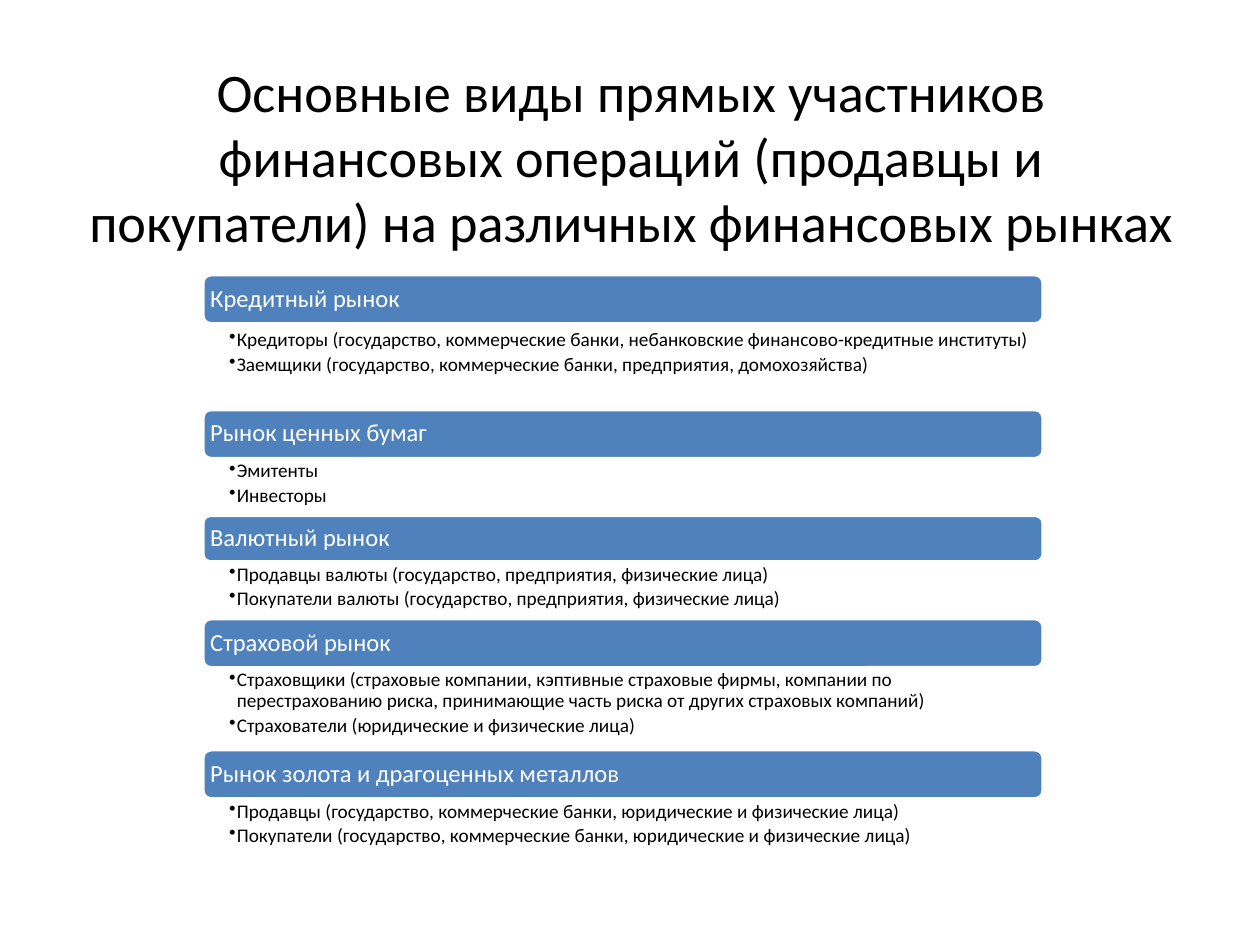
from lxml import etree
from pptx import Presentation
from pptx.dml.color import RGBColor
from pptx.enum.shapes import MSO_SHAPE
from pptx.enum.text import MSO_ANCHOR, MSO_AUTO_SIZE, PP_ALIGN
from pptx.oxml.ns import qn
from pptx.util import Inches, Pt

ROUND = MSO_SHAPE.ROUNDED_RECTANGLE
TOP, MIDDLE = MSO_ANCHOR.TOP, MSO_ANCHOR.MIDDLE
LEFT, CENTER = PP_ALIGN.LEFT, PP_ALIGN.CENTER

TITLE = ("Основные виды прямых участников финансовых операций "
         "(продавцы и покупатели) на различных финансовых рынках")
# market, bar height, gap below the bar, list height, participants
MARKETS = [
    ("Кредитный рынок", 0.39, 0.03, 0.65, [
        "Кредиторы (государство, коммерческие банки, небанковские "
        "финансово-кредитные институты)",
        "Заемщики (государство, коммерческие банки, предприятия, домохозяйства)"]),
    ("Рынок ценных бумаг", 0.39, 0, 0.45, ["Эмитенты", "Инвесторы"]),
    ("Валютный рынок", 0.37, 0, 0.45, [
        "Продавцы валюты (государство, предприятия, физические лица)",
        "Покупатели валюты (государство, предприятия, физические лица)"]),
    ("Страховой рынок", 0.39, 0, 0.65, [
        "Страховщики (страховые компании, кэптивные страховые фирмы, компании по "
        "перестрахованию риска, принимающие часть риска от других страховых компаний)",
        "Страхователи (юридические и физические лица)"]),
    ("Рынок золота и драгоценных металлов", 0.39, 0, 0.45, [
        "Продавцы (государство, коммерческие банки, юридические и физические лица)",
        "Покупатели (государство, коммерческие банки, юридические и физические лица)"]),
]
COLORS = {"bar": "4F81BD", "white": "FFFFFF", "black": "000000"}
X, Y, WIDTH = 1.61, 2.18, 6.67


def color(name):
    return RGBColor.from_string(COLORS[name])


def style(para, size, tint, align=LEFT):
    para.alignment = align
    font = para.font
    font.name, font.size = "Calibri", Pt(size)
    font.color.rgb = color(tint)


def frame(shape, anchor, left, top, right, bottom):
    text = shape.text_frame
    text.word_wrap = True
    text.vertical_anchor = anchor
    text.margin_left, text.margin_top = Inches(left), Inches(top)
    text.margin_right, text.margin_bottom = Inches(right), Inches(bottom)
    return text


def bullet(para):
    props = para._p.get_or_add_pPr()
    props.set("marL", str(Inches(0.06)))
    props.set("indent", str(Inches(-0.06)))
    etree.SubElement(props, qn("a:buChar")).set("char", "•")


def add_bar(slide, name, top, height):
    bar = slide.shapes.add_shape(
        ROUND, Inches(X), Inches(top), Inches(WIDTH), Inches(height))
    bar.shadow.inherit = False
    bar.fill.solid()
    bar.fill.fore_color.rgb = color("bar")
    bar.line.color.rgb = color("white")
    bar.line.width = Pt(2)
    # The rounded corners already push the text in by about 0.02
    text = frame(bar, MIDDLE, 0.04, 0.04, 0.04, 0.04)
    text.text = name
    para = text.paragraphs[0]
    para.line_spacing = 0.9
    style(para, 14, "white")


def add_list(slide, items, top, height):
    box = slide.shapes.add_textbox(
        Inches(X), Inches(top), Inches(WIDTH), Inches(height))
    text = frame(box, TOP, 0.21, 0.02, 0.11, 0.02)
    text.text = "\n".join(items)
    for para in text.paragraphs:
        para.line_spacing = 0.9
        para.space_after = Pt(2.2)
        style(para, 11, "black")
        bullet(para)


def main():
    deck = Presentation()
    deck.slide_width, deck.slide_height = Inches(10), Inches(7.5)
    slide = deck.slides.add_slide(deck.slide_layouts[5])

    title = slide.shapes.title
    title.left, title.top = Inches(0.51), Inches(0.3)
    title.width, title.height = Inches(8.99), Inches(1.87)
    text = frame(title, MIDDLE, 0.1, 0.05, 0.1, 0.05)
    text.auto_size = MSO_AUTO_SIZE.NONE
    text.text = TITLE
    style(text.paragraphs[0], 31, "black", CENTER)

    top = Y
    for name, bar, gap, height, items in MARKETS:
        add_bar(slide, name, top, bar)
        top += bar + gap
        add_list(slide, items, top, height)
        top += height

    deck.save("out.pptx")


if __name__ == "__main__":
    main()
